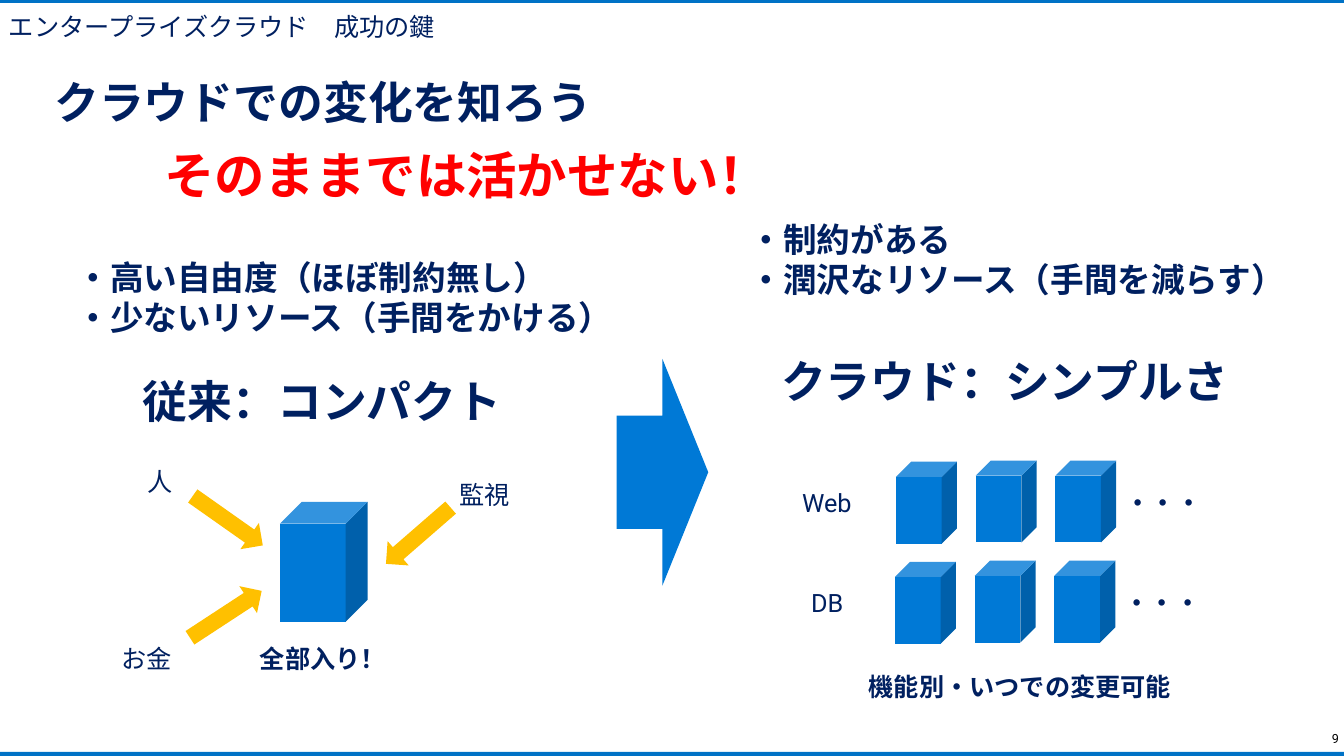
"""Build the slide comparing compact legacy systems with simple cloud systems."""
from dataclasses import dataclass

from pptx import Presentation
from pptx.dml.color import RGBColor
from pptx.enum.shapes import MSO_SHAPE as Preset
from pptx.enum.text import MSO_ANCHOR as Anchor, MSO_AUTO_SIZE as AutoSize, PP_ALIGN as Align
from pptx.util import Pt


@dataclass(frozen=True)
class Theme:
    font: str = "Roboto"
    navy: str = "002060"
    red: str = "FF0000"
    black: str = "000000"
    bar: str = "0072C6"
    blue: str = "0079D6"
    amber: str = "FFC000"
    number: int = 9
    label: int = 18
    point: int = 24
    heading: int = 32
    alert: int = 36


THEME = Theme()


def add_text(shapes, box, lines, size=THEME.label, bold=False, color=THEME.navy, align=Align.LEFT):
    """Add an unwrapped text box with one paragraph per line."""
    shape = shapes.add_textbox(*map(Pt, box))
    frame = shape.text_frame
    frame.word_wrap = False
    frame.auto_size = AutoSize.SHAPE_TO_FIT_TEXT
    for index, line in enumerate(lines):
        paragraph = frame.add_paragraph() if index else frame.paragraphs[0]
        paragraph.alignment = align
        run = paragraph.add_run()
        run.text = line
        run.font.name = THEME.font
        run.font.size = Pt(size)
        run.font.bold = bold
        run.font.color.rgb = RGBColor.from_string(color)
    return shape


def add_solid(shapes, preset, box, color, rotation=0):
    """Add a filled preset shape without outline or shadow."""
    shape = shapes.add_shape(preset, *map(Pt, box))
    shape.shadow.inherit = False
    shape.fill.solid()
    shape.fill.fore_color.rgb = RGBColor.from_string(color)
    shape.line.fill.background()
    shape.rotation = rotation
    return shape


def add_frame(shapes):
    """Add the edge bars, the page number and the running title."""
    for top in (537.1, -0.7):
        add_solid(shapes, Preset.RECTANGLE, (0, top, 960, 2.9), THEME.bar)
    number = add_text(shapes, (910.8, 518.4, 52.6, 18), ["9"], THEME.number,
                      color=THEME.black, align=Align.RIGHT)
    number.text_frame.word_wrap = True
    number.text_frame.vertical_anchor = Anchor.MIDDLE
    add_text(shapes, (-0.7, 4.3, 323.3, 29), ["エンタープライズクラウド　成功の鍵"])


def add_legacy(shapes):
    """Add the single all-in-one server with its three inputs."""
    add_solid(shapes, Preset.CUBE, (200, 358.4, 62.6, 85.7), THEME.blue)
    add_text(shapes, (95, 263.5, 272.9, 46), ["従来：コンパクト"], THEME.heading, True)
    add_text(shapes, (178.6, 455.8, 105.1, 29), ["全部入り！"], bold=True)
    inputs = (
        ("人", (98.6, 329.8, 32.4, 29), (151.2, 341.3), 305.2),
        ("監視", (321.1, 339.1, 51.1, 29), (287.3, 352.1), 49),
        ("お金", (79.9, 455.8, 51.1, 29), (149.8, 408.2), 236.8),
    )
    for name, box, corner, rotation in inputs:
        add_solid(shapes, Preset.DOWN_ARROW, (*corner, 23, 61.2), THEME.amber, rotation)
        add_text(shapes, box, [name])


def add_cloud(shapes):
    """Add the rows of servers split by function."""
    add_text(shapes, (550.8, 249.1, 337.7, 46), ["クラウド：シンプルさ"], THEME.heading, True)
    rows = (("Web", 565.9, 52.6, 640, 329), ("DB", 572.4, 38.9, 639.3, 400.5))
    for name, name_left, name_width, left, top in rows:
        add_text(shapes, (name_left, top + 15.5, name_width, 29), [name])
        for column in range(3):
            drop = 0 if column else 0.8
            box = (left + 56.9 * column, top + drop, 43.5, 58.5)
            add_solid(shapes, Preset.CUBE, box, THEME.blue)
        add_text(shapes, (left + 157, top + 15.7, 69.1, 29), ["・・・"], bold=True)
    add_text(shapes, (613.4, 475.9, 232.6, 29), ["機能別・いつでの変更可能"], bold=True)


def main():
    """Assemble and save the slide."""
    presentation = Presentation()
    presentation.slide_width, presentation.slide_height = Pt(960), Pt(540)
    shapes = presentation.slides.add_slide(presentation.slide_layouts[6]).shapes
    add_frame(shapes)
    add_text(shapes, (31.7, 49.7, 402.5, 46), ["クラウドでの変化を知ろう"], THEME.heading, True)
    add_text(shapes, (47.5, 180, 402.5, 65.5),
             ["・高い自由度（ほぼ制約無し）", "・少ないリソース（手間をかける）"], THEME.point, True)
    add_legacy(shapes.add_group_shape().shapes)
    add_cloud(shapes.add_group_shape().shapes)
    add_text(shapes, (528.5, 152.6, 402.5, 65.5),
             ["・制約がある", "・潤沢なリソース（手間を減らす）"], THEME.point, True)
    add_solid(shapes, Preset.RIGHT_ARROW, (440.4, 256.3, 65.5, 162), THEME.blue)
    add_text(shapes, (110.2, 99.4, 450.7, 51.1), ["そのままでは活かせない！"],
             THEME.alert, True, THEME.red)
    presentation.save("out.pptx")


if __name__ == "__main__":
    main()
